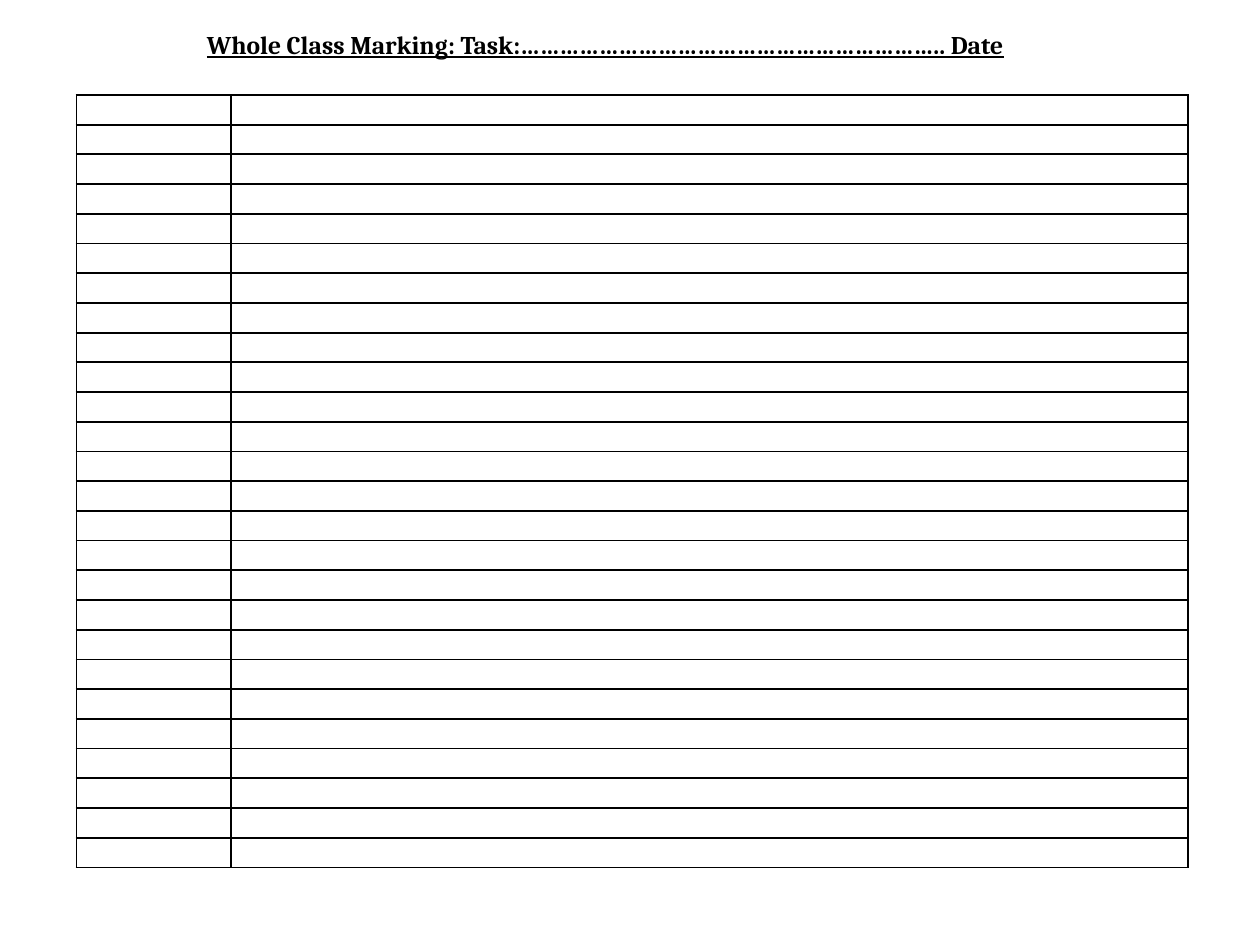
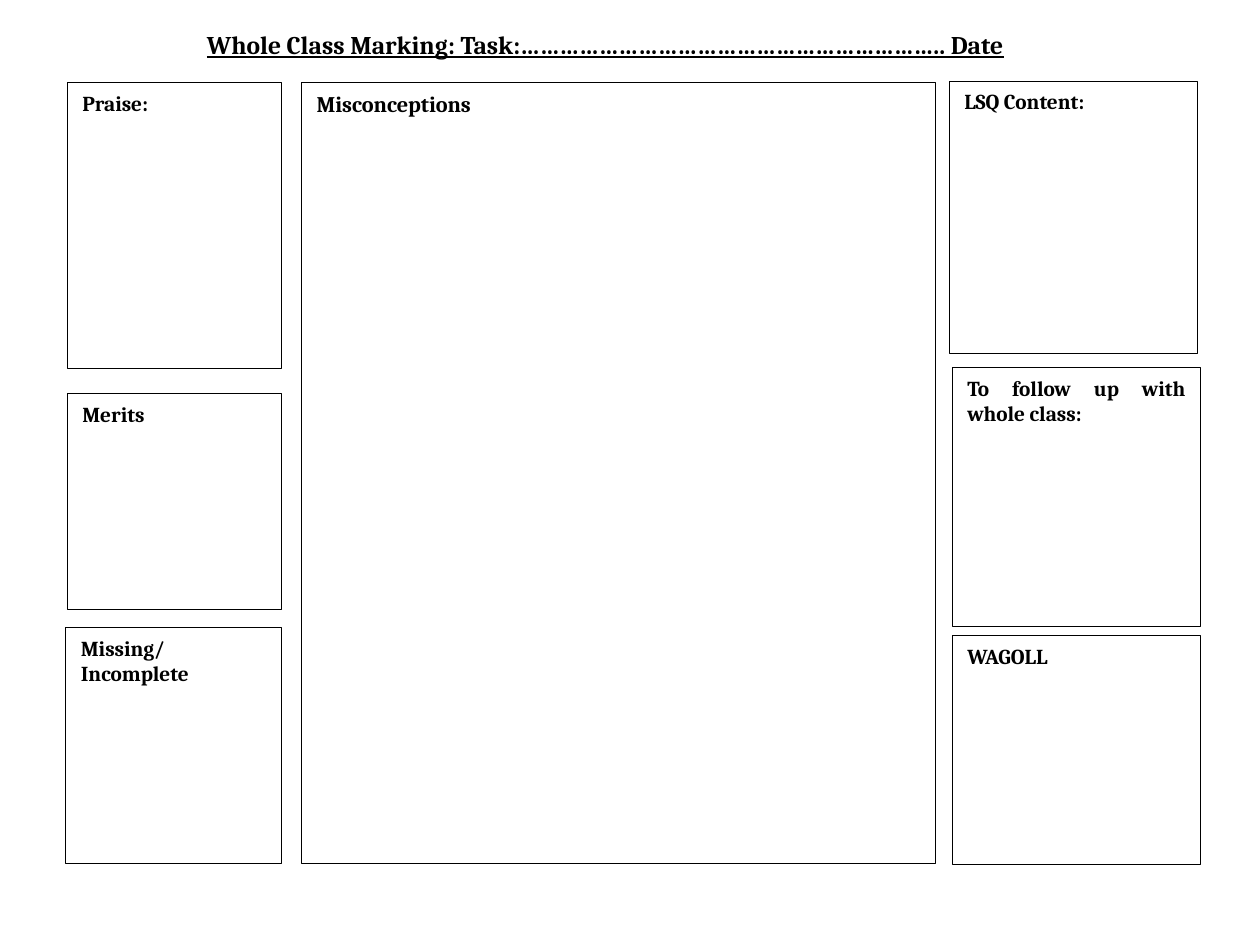
from lxml import etree
from pptx import Presentation
from pptx.dml.color import RGBColor
from pptx.enum import shapes, text
from pptx.oxml import ns
from pptx.util import Inches, Pt

BLACK = RGBColor(0x00, 0x00, 0x00)
WHITE = RGBColor(0xFF, 0xFF, 0xFF)
FONT = "Cambria"
HEADING = "Whole Class Marking: Task:……………………………………………………….. Date"

# Marking grid
GRID_ROWS = 26
GRID_COLUMNS = (1.01, 6.25)
GRID_HEIGHT = 5.05

# Feedback boxes: label, left, top, width, height, text size
FEEDBACK = [
    ("Praise:", 0.44, 0.54, 1.4, 1.87, 10),
    ("Merits", 0.44, 2.57, 1.4, 1.41, 10),
    ("LSQ Content:", 6.2, 0.53, 1.62, 1.78, 10),
    ("Misconceptions", 1.97, 0.54, 4.14, 5.1, 10.5),
    ("To follow up with whole class:", 6.22, 2.4, 1.62, 1.69, 10),
    ("Missing/Incomplete", 0.43, 4.1, 1.41, 1.54, 10),
    ("WAGOLL", 6.22, 4.15, 1.62, 1.5, 10),
]


class MarkingSheets:
    """Holds the shared style and the slide being filled."""

    def __init__(self):
        self.deck = Presentation()
        self.deck.slide_width = Inches(8.23)
        self.deck.slide_height = Inches(6.18)
        self.slide = None

    def new_sheet(self):
        self.slide = self.deck.slides.add_slide(self.deck.slide_layouts[6])
        heading = self.slide.shapes.add_textbox(
            Inches(0), Inches(0.14), Inches(7.91), Inches(0.3))
        self.set_text(heading.text_frame, HEADING, 12, text.PP_ALIGN.CENTER)
        heading.text_frame.auto_size = text.MSO_AUTO_SIZE.SHAPE_TO_FIT_TEXT
        heading.text_frame.paragraphs[0].font.underline = True

    def set_text(self, frame, words, size, align):
        frame.word_wrap = True
        paragraph = frame.paragraphs[0]
        paragraph.text = words
        paragraph.alignment = align
        font = paragraph.font
        font.name, font.size, font.bold = FONT, Pt(size), True
        font.color.rgb = BLACK

    def feedback_box(self, label, left, top, width, height, size):
        box = self.slide.shapes.add_shape(
            shapes.MSO_SHAPE.RECTANGLE,
            Inches(left), Inches(top), Inches(width), Inches(height))
        box.shadow.inherit = False
        box.fill.solid()
        box.fill.fore_color.rgb = WHITE
        box.line.color.rgb = BLACK
        box.line.width = Pt(0.5)
        box.text_frame.vertical_anchor = text.MSO_ANCHOR.TOP
        self.set_text(box.text_frame, label, size, text.PP_ALIGN.JUSTIFY)

    def grid(self, left, top, columns, rows, height):
        grid = self.slide.shapes.add_table(
            rows, len(columns), Inches(left), Inches(top),
            Inches(sum(columns)), Inches(height)).table
        grid.first_row = grid.horz_banding = False
        for column, width in zip(grid.columns, columns):
            column.width = Inches(width)
        for cell in grid.iter_cells():
            self.style_cell(cell)

    def style_cell(self, cell):
        cell.margin_top = cell.margin_bottom = 0
        # Small type keeps the empty rows at their set height
        paragraph = cell.text_frame.paragraphs[0]
        paragraph.font.size = Pt(8)
        etree.SubElement(paragraph._p, ns.qn("a:endParaRPr"), sz="800")
        # Borders come before the fill in the cell properties
        properties = cell._tc.get_or_add_tcPr()
        for side in ("lnL", "lnR", "lnT", "lnB"):
            border = etree.SubElement(
                properties, ns.qn(f"a:{side}"), w=str(Pt(1)))
            stroke = etree.SubElement(border, ns.qn("a:solidFill"))
            etree.SubElement(stroke, ns.qn("a:srgbClr"), val=str(BLACK))
        cell.fill.solid()
        cell.fill.fore_color.rgb = WHITE


def main():
    sheets = MarkingSheets()

    # Slide 1: marking grid
    sheets.new_sheet()
    sheets.grid(0.5, 0.62, GRID_COLUMNS, GRID_ROWS, GRID_HEIGHT)

    # Slide 2: feedback boxes
    sheets.new_sheet()
    for box in FEEDBACK:
        sheets.feedback_box(*box)

    sheets.deck.save("out.pptx")


if __name__ == "__main__":
    main()
